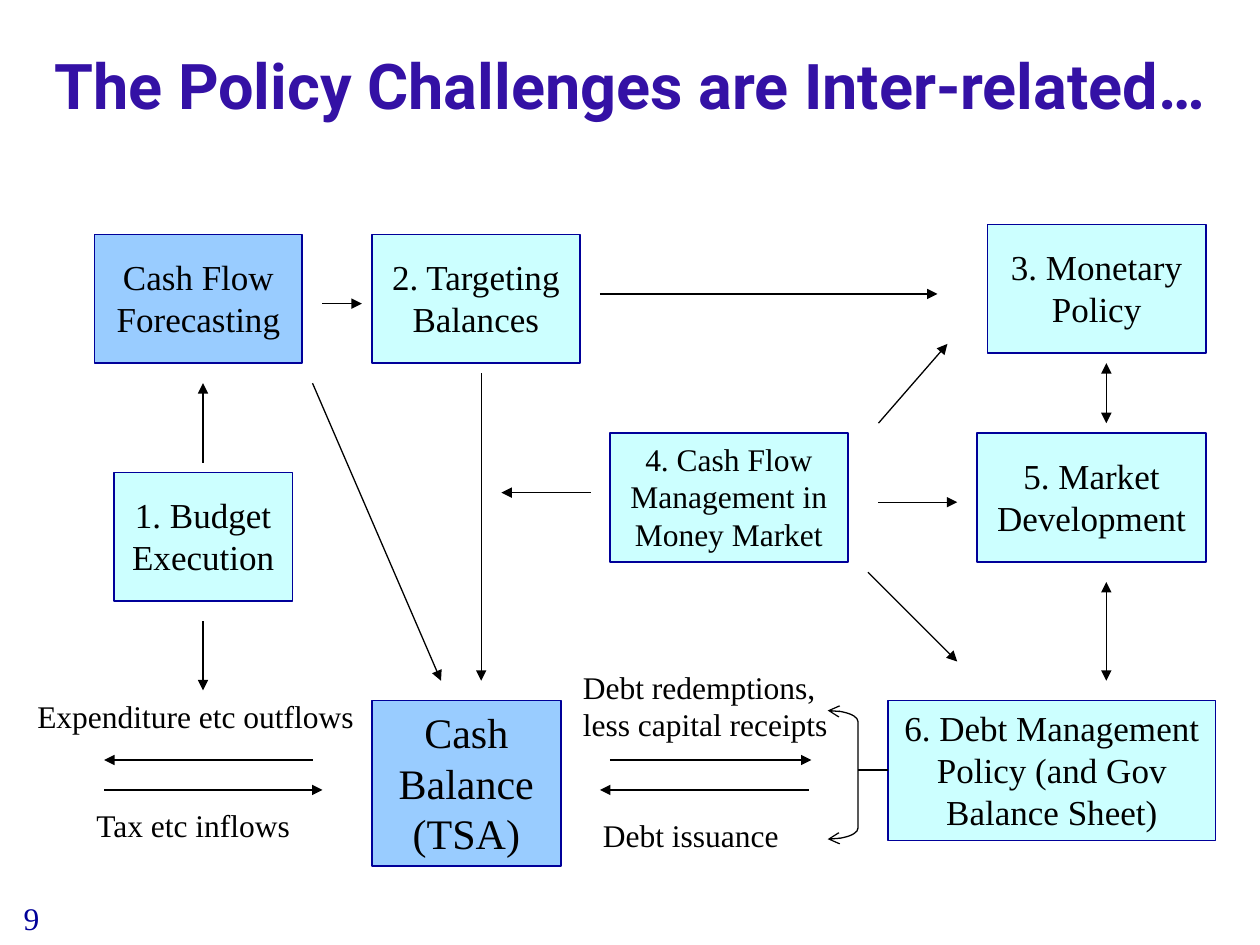
import pptx
import pptx.dml.color
import pptx.enum.shapes
import pptx.enum.text
import pptx.oxml.ns
import pptx.util
from lxml import etree

Pt = pptx.util.Pt
ALIGN = pptx.enum.text.PP_ALIGN
ANCHOR = pptx.enum.text.MSO_ANCHOR
SHAPE = pptx.enum.shapes.MSO_SHAPE

COLORS = {
    "title": "3411A5",
    "navy": "000099",
    "black": "000000",
    "balance": "99CCFF",
    "policy": "CCFFFF",
}
BODY_FONT = "Times New Roman"

# Boxes: text, left, top, width, height, fill, size, vertical inset
BOXES = [
    ("Cash Flow Forecasting", 54, 134, 118.8, 73.5, "balance", 20, 12.2),
    ("2. Targeting Balances", 212.5, 134, 118.8, 73.5, "policy", 20, 12.2),
    ("3. Monetary Policy", 564.3, 128.3, 124.7, 73.5, "policy", 20, 12.2),
    ("1. Budget Execution", 65, 270, 102.2, 73.5, "policy", 20, 12.2),
    ("4. Cash Flow Management in Money Market", 348.5, 247.6, 136, 73.5, "policy", 18, 3.6),
    ("5. Market Development", 558.5, 247.6, 130.5, 73.5, "policy", 20, 12.2),
    ("Cash Balance (TSA)", 212.5, 400.3, 108, 94.5, "balance", 24, 3.6),
    ("6. Debt Management Policy (and Gov Balance Sheet)", 507.5, 400.3, 187.2, 80, "policy", 20, 3.6),
]

# Flow labels: text, left, top, width, height
LABELS = [
    ("Expenditure etc outflows", 14.2, 394.8, 215, 28.8),
    ("Tax etc inflows", 48, 457, 152.6, 28.8),
    ("Debt redemptions, less capital receipts", 326, 378, 164.2, 50.4),
    ("Debt issuance", 337.5, 463, 153.4, 28.8),
]

# Arrows: start x, start y, end x, end y
ARROWS = [
    (184.3, 173.5, 206.8, 173.5),    # forecasting to targeting
    (178.6, 219, 252, 389),          # forecasting to cash balance
    (116, 264.5, 116, 219),          # budget to forecasting
    (116, 355, 116, 394.5),          # budget to outflows
    (275, 213.3, 275, 389),          # targeting to cash balance
    (342.8, 168, 535.7, 168),        # targeting to monetary policy
    (337.5, 281.5, 286.5, 281.5),    # money market to balances
    (502, 241.8, 541.4, 196.5),      # money market to monetary policy
    (502, 287, 547, 287),            # money market to development
    (496, 327, 547, 378),            # money market to debt policy
    (178.6, 434.3, 59.5, 434.3),     # outflows
    (59.5, 451.4, 184.3, 451.4),     # inflows
    (348.5, 434.3, 463.7, 434.3),    # redemptions
    (462.2, 451.4, 342.8, 451.4),    # issuance
]
TWO_WAY_ARROWS = [
    (632.2, 207.5, 632.2, 241.8),    # monetary policy and development
    (632.2, 332.6, 632.2, 389),      # development and debt policy
]


def color(name):
    return pptx.dml.color.RGBColor.from_string(COLORS[name])


def write_text(shape, text, size, color_name="black", font=BODY_FONT,
               align=ALIGN.CENTER, anchor=ANCHOR.TOP, inset=3.6, bold=False):
    frame = shape.text_frame
    frame.text = text
    frame.word_wrap = True
    frame.auto_size = pptx.enum.text.MSO_AUTO_SIZE.NONE
    frame.vertical_anchor = anchor
    frame.margin_left = frame.margin_right = Pt(7.2)
    frame.margin_top = frame.margin_bottom = Pt(inset)
    paragraph = frame.paragraphs[0]
    paragraph.alignment = align
    run_font = paragraph.runs[0].font
    run_font.name = font
    run_font.size = Pt(size)
    run_font.bold = bold
    run_font.color.rgb = color(color_name)


def style_line(shape, color_name, width, head=None, tail=None):
    shape.line.color.rgb = color(color_name)
    shape.line.width = Pt(width)
    line = shape.line._get_or_add_ln()
    for tag, kind in (("a:headEnd", head), ("a:tailEnd", tail)):
        if kind:
            etree.SubElement(line, pptx.oxml.ns.qn(tag), type=kind)


def add_title(slide, text):
    title = slide.shapes.title
    title.left, title.top = Pt(0), Pt(0)
    title.width, title.height = Pt(720), Pt(96)
    write_text(title, text, 36, "title", "Roboto", anchor=ANCHOR.MIDDLE, bold=True)


def add_box(slide, text, left, top, width, height, fill, size, inset):
    box = slide.shapes.add_shape(SHAPE.RECTANGLE, Pt(left), Pt(top), Pt(width), Pt(height))
    box.shadow.inherit = False
    box.fill.solid()
    box.fill.fore_color.rgb = color(fill)
    style_line(box, "navy", 1)
    write_text(box, text, size, inset=inset)


def add_label(slide, text, left, top, width, height, color_name="black", align=ALIGN.LEFT):
    label = slide.shapes.add_textbox(Pt(left), Pt(top), Pt(width), Pt(height))
    write_text(label, text, 18, color_name, align=align)


def add_line(slide, start_x, start_y, end_x, end_y, head=None, tail=None):
    line = slide.shapes.add_connector(
        pptx.enum.shapes.MSO_CONNECTOR.STRAIGHT,
        Pt(start_x), Pt(start_y), Pt(end_x), Pt(end_y))
    style_line(line, "black", 0.75, head, tail)
    etree.SubElement(line._element.spPr, pptx.oxml.ns.qn("a:effectLst"))


def add_bracket(slide, left, top, width, height):
    bracket = slide.shapes.add_shape(
        SHAPE.RIGHT_BRACKET, Pt(left), Pt(top), Pt(width), Pt(height))
    bracket.adjustments[0] = 0.36
    bracket.shadow.inherit = False
    bracket.fill.background()
    style_line(bracket, "black", 0.75, "arrow", "arrow")


def main():
    presentation = pptx.Presentation()
    presentation.slide_width, presentation.slide_height = Pt(720), Pt(540)
    slide = presentation.slides.add_slide(presentation.slide_layouts.get_by_name("Title Only"))

    # Title and page number
    add_title(slide, "The Policy Challenges are Inter-related…")
    add_label(slide, "9", 0, 510, 36, 28.8, "navy", ALIGN.CENTER)

    # Policy boxes and flow labels
    for box in BOXES:
        add_box(slide, *box)
    for label in LABELS:
        add_label(slide, *label)

    # Links between the boxes
    for arrow in ARROWS:
        add_line(slide, *arrow, tail="triangle")
    for arrow in TWO_WAY_ARROWS:
        add_line(slide, *arrow, head="triangle", tail="triangle")

    # Bracket joining the debt flows to debt policy
    add_bracket(slide, 473, 406, 17.3, 73.5)
    add_line(slide, 507.5, 440, 490.3, 440)

    presentation.save("out.pptx")


if __name__ == "__main__":
    main()
